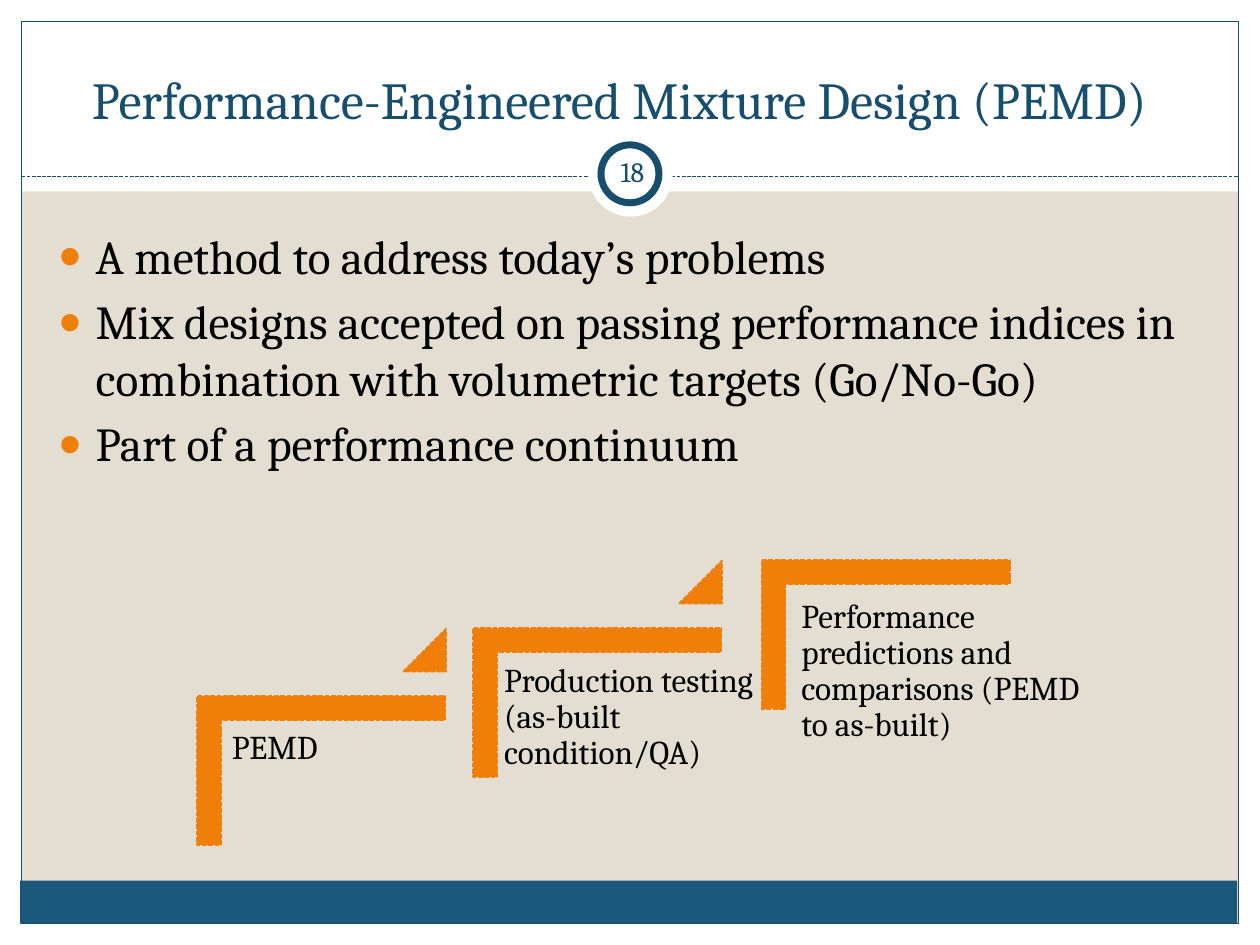
from lxml import etree
from pptx import Presentation
from pptx.dml.color import RGBColor
from pptx.enum.dml import MSO_LINE
from pptx.enum.shapes import MSO_CONNECTOR, MSO_SHAPE
from pptx.enum.text import MSO_ANCHOR, MSO_AUTO_SIZE, PP_ALIGN
from pptx.oxml.ns import qn
from pptx.util import Inches, Pt

RECT, OVAL = MSO_SHAPE.RECTANGLE, MSO_SHAPE.OVAL
CORNER, TRIANGLE = MSO_SHAPE.CORNER, MSO_SHAPE.ISOSCELES_TRIANGLE
DASH = MSO_LINE.SQUARE_DOT
CENTER, LEFT = PP_ALIGN.CENTER, PP_ALIGN.LEFT
TOP, MIDDLE, BOTTOM = MSO_ANCHOR.TOP, MSO_ANCHOR.MIDDLE, MSO_ANCHOR.BOTTOM
COLORS = {k: RGBColor.from_string(v) for k, v in {
    "sand": "E3DED1", "white": "FFFFFF", "blue": "1B587C",
    "navy": "184E6D", "orange": "F07F09", "black": "000000"}.items()}

prs = Presentation()
prs.slide_width, prs.slide_height = Inches(10), Inches(7.5)
COL, ROW = prs.slide_width / 100, prs.slide_height / 75
s = prs.slides.add_slide(prs.slide_layouts[1])
s.background.fill.solid()
s.background.fill.fore_color.rgb = COLORS["sand"]


def add_box(kind, x, y, w, h, fill=None, line=None, width=0.75):
    sp = s.shapes.add_shape(kind, int(x * COL), int(y * ROW), int(w * COL), int(h * ROW))
    sp.shadow.inherit = False
    if fill:
        sp.fill.solid()
        sp.fill.fore_color.rgb = COLORS[fill]
    else:
        sp.fill.background()
    if line:
        sp.line.color.rgb = COLORS[line]
        sp.line.width = Pt(width)
    else:
        sp.line.fill.background()
    return sp


def set_text(sp, at, lines, size, color, align=LEFT, anchor=TOP, inset=None):
    x, y, w, h = at
    sp.left, sp.top, sp.width, sp.height = int(x * COL), int(y * ROW), int(w * COL), int(h * ROW)
    tf = sp.text_frame
    tf.text = "\n".join(lines)
    tf.word_wrap = True
    tf.auto_size = MSO_AUTO_SIZE.NONE
    tf.vertical_anchor = anchor
    if inset:
        tf.margin_left = tf.margin_top = tf.margin_right = tf.margin_bottom = Inches(inset)
    for p in tf.paragraphs:
        p.alignment = align
        for r in p.runs:
            r.font.name = "Cambria"
            r.font.size = Pt(size)
            r.font.color.rgb = COLORS[color]
    return tf


for x, y, w, h, fill in [(0, 73.3, 100, 1.7, "white"), (0, 0, 100, 15.2, "white"),
                         (0, 0, 1.7, 75, "white"), (98.3, 0, 1.7, 75, "white"),
                         (1.6, 69.9, 96.6, 3.4, "blue")]:
    add_box(RECT, x, y, w, h, fill)
add_box(RECT, 1.7, 1.7, 96.6, 71.6, line="navy")

rule = s.shapes.add_connector(MSO_CONNECTOR.STRAIGHT, int(1.7 * COL), int(14 * ROW),
                              int(98.3 * COL), int(14 * ROW))
rule.line.color.rgb = COLORS["navy"]
rule.line.width = Pt(0.75)
rule.line.dash_style = DASH
etree.SubElement(rule._element.spPr, qn("a:effectLst"))

add_box(OVAL, 46.7, 10.5, 6.7, 6.7, "white")
add_box(OVAL, 47.7, 11.5, 4.6, 4.6, "white", "navy", 4)

title, body = s.shapes.title, s.placeholders[1]
for sp in (body, title):
    s.shapes._spTree.append(sp._element)

tf = set_text(body, (3.6, 17.5, 93, 50), [
    "A method to address today’s problems",
    "Mix designs accepted on passing performance indices in combination with "
    "volumetric targets (Go/No-Go)",
    "Part of a performance continuum"], 27, "black")
for i, p in enumerate(tf.paragraphs):
    pPr = p._p.get_or_add_pPr()
    pPr.set("marL", str(Inches(0.3)))
    pPr.set("indent", str(-Inches(0.3)))
    color = etree.SubElement(pPr, qn("a:buClr"))
    etree.SubElement(color, qn("a:srgbClr"), val=str(COLORS["orange"]))
    etree.SubElement(pPr, qn("a:buSzPct"), val="85000")
    etree.SubElement(pPr, qn("a:buChar"), char="●")
    p.space_before = Pt(5 if i else 0)

set_text(title, (1.8, 2.5, 94.8, 8.3), ["Performance-Engineered Mixture Design (PEMD)"],
         29.7, "navy", CENTER, BOTTOM)
set_text(s.shapes.add_textbox(0, 0, 0, 0), (47.7, 11.2, 5, 4.8), ["18"],
         16, "navy", CENTER, MIDDLE, 0.05)

STEPS = [(19.6, (17.6, 57.2, 17.8, 15.6), "PEMD"),
         (41.5, (39.2, 51.9, 21.8, 15.6), "Production testing (as-built condition/QA)"),
         (64.4, (62.8, 46.8, 24, 15.6),
          "Performance predictions and comparisons (PEMD to as-built)")]
RISE = 5.4
for i, (x, at, label) in enumerate(STEPS):
    y = 51.3 - i * RISE
    step = add_box(CORNER, x, y, 11.8, 19.7, "orange", "orange", 0.9)
    step.rotation = 90
    step.adjustments[0] = step.adjustments[1] = 0.161
    step.line.dash_style = DASH
    tf = set_text(s.shapes.add_textbox(0, 0, 0, 0), at, [label], 19, "black", inset=0.08)
    tf.paragraphs[0].line_spacing = 0.9
    if i < len(STEPS) - 1:
        marker = add_box(TRIANGLE, x + 12.4, y - 1.4, 3.4, 3.4, "orange", "orange", 0.9)
        marker.adjustments[0] = 1
        marker.line.dash_style = DASH

prs.save("out.pptx")
